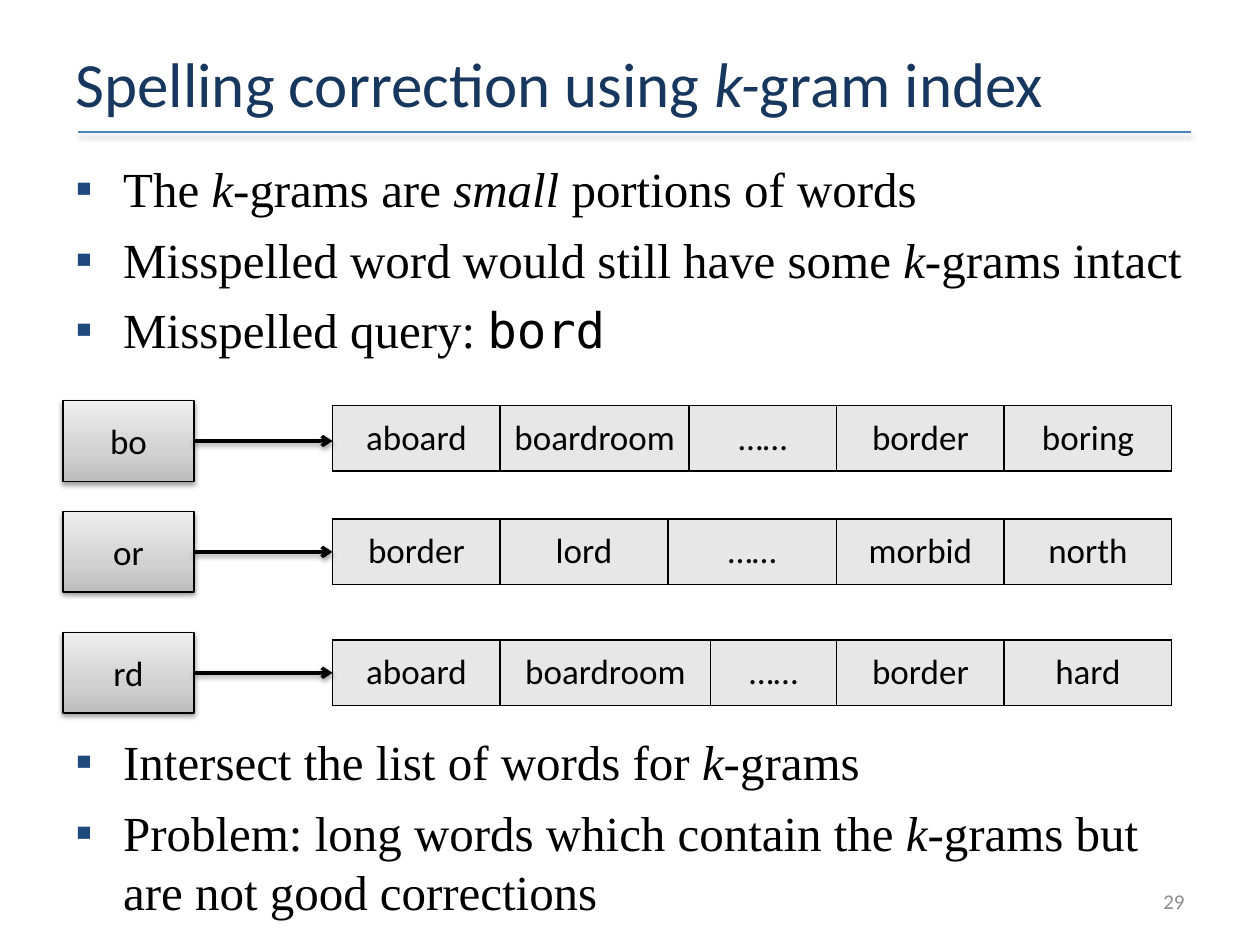
import copy

import lxml.etree
import pptx
import pptx.dml.color
import pptx.enum.shapes
import pptx.enum.text
import pptx.oxml.ns
import pptx.util

Inches = pptx.util.Inches
Pt = pptx.util.Pt
qn = pptx.oxml.ns.qn
ALIGN = pptx.enum.text.PP_ALIGN
ANCHOR = pptx.enum.text.MSO_ANCHOR
SHAPE = pptx.enum.shapes.MSO_SHAPE
STRAIGHT = pptx.enum.shapes.MSO_CONNECTOR.STRAIGHT


def color(value):
    return pptx.dml.color.RGBColor.from_string(value)


def child(parent, tag, **attributes):
    node = lxml.etree.SubElement(parent, qn(tag))
    for key, value in attributes.items():
        node.set(key, str(value))
    return node


class SlideBuilder:
    SANS, SERIF, MONO = "Calibri", "Times New Roman", "DejaVu Sans Mono"
    BLACK, TITLE, RULE = "000000", "17375E", "4F81BD"
    BULLET, CELL, MUTED = "1F497D", "E7E7E7", "8C8C8C"
    GRADIENT = [(0, "BDBDBD"), (0.35, "D1D1D1"), (1, "EEEEEE")]

    def __init__(self, page):
        self.page = page

    def set_spans(self, para, spans, size, font, ink=BLACK, align=ALIGN.LEFT):
        """Fill a paragraph; a span is plain text or (text, style)."""
        para.alignment = align
        para.font.size, para.font.name = Pt(size), font
        para.font.color.rgb = color(ink)
        for item in spans:
            text, style = (item, "") if isinstance(item, str) else item
            span = para.add_run()
            span.text = text
            if style == "italic":
                span.font.italic = True
            elif style == "mono":
                span.font.name = self.MONO

    def shadow(self, properties):
        effects = properties.find(qn("a:effectLst"))
        if effects is None:
            effects = child(properties, "a:effectLst")
        outer = child(effects, "a:outerShdw", blurRad=Pt(3.1), dist=Pt(1.6),
                      dir=5400000, rotWithShape=0)
        child(child(outer, "a:srgbClr", val=self.BLACK), "a:alpha", val=38000)

    def frame(self, left, top, width, height, anchor=ANCHOR.TOP):
        box = self.page.shapes.add_textbox(
            Inches(left), Inches(top), Inches(width), Inches(height))
        box.text_frame.word_wrap = True
        box.text_frame.vertical_anchor = anchor
        return box.text_frame

    def text(self, place, spans, size, ink, align=ALIGN.LEFT):
        frame = self.frame(*place, anchor=ANCHOR.MIDDLE)
        self.set_spans(frame.paragraphs[0], spans, size, self.SANS, ink, align)

    def bullets(self, place, items):
        frame = self.frame(*place)
        for index, spans in enumerate(items):
            para = frame.add_paragraph() if index else frame.paragraphs[0]
            self.set_spans(para, spans, 28, self.SERIF)
            para.space_before = Pt(6.7)
            properties = para._p.get_or_add_pPr()
            properties.set("marL", str(Inches(0.38)))
            properties.set("indent", str(-Inches(0.38)))
            marks = [lxml.etree.Element(qn(tag)) for tag in
                     ("a:buClr", "a:buFont", "a:buChar")]
            child(marks[0], "a:srgbClr", val=self.BULLET)
            marks[1].set("typeface", self.SERIF)
            marks[2].set("char", "▪")
            position = list(properties).index(properties.find(qn("a:spcBef"))) + 1
            properties[position:position] = marks

    def line(self, start, end, ink, weight, source=None, arrow=False):
        line = self.page.shapes.add_connector(
            STRAIGHT, *(Inches(value) for value in start + end))
        if source is not None:
            line.begin_connect(source, 3)
        line.line.color.rgb = color(ink)
        line.line.width = Pt(weight)
        if arrow:
            child(line.line._get_or_add_ln(), "a:tailEnd", type="arrow")
        self.shadow(line._element.spPr)

    def key_box(self, left, top, width, height, label):
        box = self.page.shapes.add_shape(
            SHAPE.RECTANGLE, Inches(left), Inches(top), Inches(width), Inches(height))
        box.fill.gradient()
        box.fill.gradient_angle = 90
        stops = box._element.spPr.find(".//" + qn("a:gsLst"))
        stops.append(copy.deepcopy(stops[-1]))
        for stop, (position, value) in zip(box.fill.gradient_stops, self.GRADIENT):
            stop.position = position
            stop.color.rgb = color(value)
        box.line.color.rgb = color(self.BLACK)
        box.line.width = Pt(0.75)
        box.shadow.inherit = False
        self.shadow(box._element.spPr)
        box.text_frame.vertical_anchor = ANCHOR.MIDDLE
        self.set_spans(box.text_frame.paragraphs[0], [label], 20, self.SANS,
                       align=ALIGN.CENTER)
        return box

    def postings(self, left, top, height, widths, words):
        table = self.page.shapes.add_table(
            1, len(words), Inches(left), Inches(top),
            Inches(sum(widths)), Inches(height)).table
        table.first_row = table.horz_banding = False
        for column, width in zip(table.columns, widths):
            column.width = Inches(width)
        for cell, word in zip(table.rows[0].cells, words):
            cell.vertical_anchor = ANCHOR.MIDDLE
            self.set_spans(cell.text_frame.paragraphs[0], [word], 20, self.SANS,
                           align=ALIGN.CENTER)
            properties = cell._tc.get_or_add_tcPr()
            for side in ("a:lnL", "a:lnR", "a:lnT", "a:lnB"):
                border = child(properties, side, w=Pt(1))
                child(child(border, "a:solidFill"), "a:srgbClr", val=self.BLACK)
            cell.fill.solid()
            cell.fill.fore_color.rgb = color(self.CELL)
            # The schema puts borders ahead of the fill
            properties.append(properties.find(qn("a:solidFill")))


def main():
    deck = pptx.Presentation()
    deck.slide_width, deck.slide_height = Inches(10), Inches(7.5)
    slide = SlideBuilder(deck.slides.add_slide(deck.slide_layouts[6]))
    k = ("k-", "italic")

    # Title and rule
    slide.line((0.62, 1.05), (9.45, 1.05), slide.RULE, 1)
    slide.text((0.5, 0.3, 9, 0.71),
               ["Spelling correction using ", k, "gram index"], 36, slide.TITLE)

    # Opening points
    slide.bullets((0.5, 1.21, 9, 1.98), [
        ["The ", k, "grams are ", ("small ", "italic"), "portions of words"],
        ["Misspelled word would still have some ", k, "grams intact"],
        ["Misspelled query: ", ("bord", "mono")],
    ])

    # Each k-gram points to its list of words
    rows = [
        ("bo", 3.18, 3.22, 1.5, "aboard boardroom …… border boring"),
        ("or", 4.06, 4.12, 1.33, "border lord …… morbid north"),
        ("rd", 5.02, 5.08, 1.67, "aboard boardroom …… border hard"),
    ]
    for gram, box_top, table_top, second, words in rows:
        box = slide.key_box(0.5, box_top, 1.04, 0.64, gram)
        widths = [1.33, second, 2.67 - second, 1.33, 1.33]
        slide.postings(2.64, table_top, 0.52, widths, words.split())
        middle = box_top + 0.32
        slide.line((1.54, middle), (2.64, middle), slide.BLACK, 2, box, arrow=True)

    # Closing points and page number
    slide.bullets((0.5, 5.76, 9, 1.59), [
        ["Intersect the list of words for ", k, "grams"],
        ["Problem: long words which contain the ", ("k", "italic"),
         "-grams but are not good corrections"],
    ])
    slide.text((7.17, 6.95, 2.33, 0.4), ["29"], 12, slide.MUTED, ALIGN.RIGHT)

    deck.save("out.pptx")


if __name__ == "__main__":
    main()
